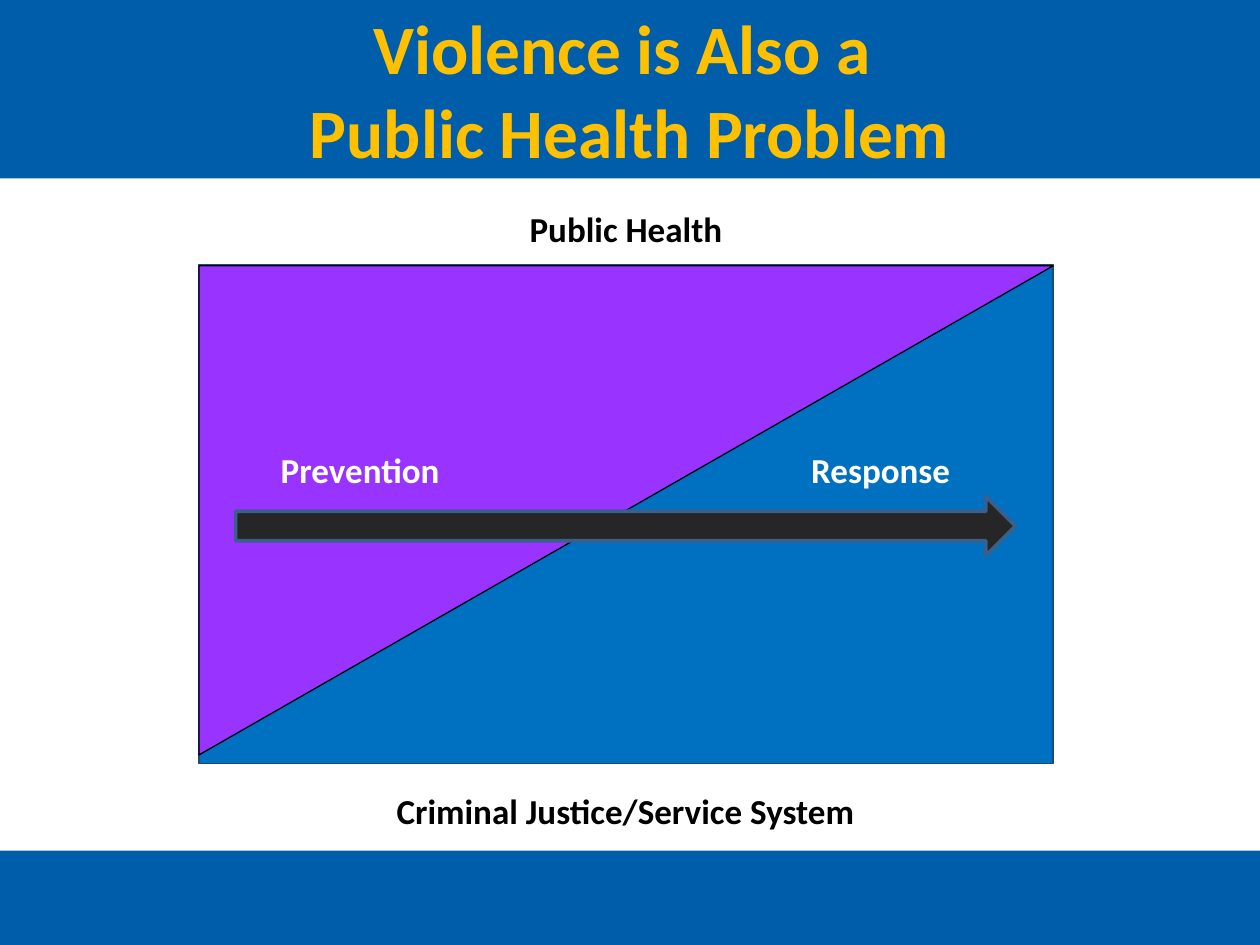
import pptx
import pptx.dml.color
import pptx.enum.shapes
import pptx.enum.text
import pptx.util

Cm = pptx.util.Cm
RGBColor = pptx.dml.color.RGBColor
SHAPE = pptx.enum.shapes.MSO_SHAPE
ALIGN = pptx.enum.text.PP_ALIGN
ANCHOR = pptx.enum.text.MSO_ANCHOR

BAND_BLUE = RGBColor(0x00, 0x5D, 0xAA)
JUSTICE_BLUE = RGBColor(0x00, 0x70, 0xC0)
NAVY = RGBColor(0x1F, 0x49, 0x7D)
PURPLE = RGBColor(0x99, 0x33, 0xFF)
CHARCOAL = RGBColor(0x26, 0x26, 0x26)
STEEL = RGBColor(0x3A, 0x5F, 0x8C)
GOLD = RGBColor(0xFF, 0xC0, 0x00)
BLACK = RGBColor(0x00, 0x00, 0x00)
WHITE = RGBColor(0xFF, 0xFF, 0xFF)

SLIDE_WIDTH, SLIDE_HEIGHT = 25.4, 19.05
FIELD_LEFT, FIELD_TOP, FIELD_WIDTH, FIELD_HEIGHT = 4.01, 5.33, 17.22, 10.06
TRIANGLE_DEPTH = 9.86


def add_filled_shape(slide, kind, left, top, width, height, fill,
                     line=None, line_width=0.75):
    shape = slide.shapes.add_shape(kind, Cm(left), Cm(top), Cm(width), Cm(height))
    shape.shadow.inherit = False
    shape.fill.solid()
    shape.fill.fore_color.rgb = fill
    if line is None:
        shape.line.fill.background()
    else:
        shape.line.color.rgb = line
        shape.line.width = pptx.util.Pt(line_width)
    return shape


def add_text(slide, text, left, top, width, height=1.11, size=20, color=BLACK,
             align=ALIGN.CENTER, anchor=ANCHOR.TOP):
    box = slide.shapes.add_textbox(Cm(left), Cm(top), Cm(width), Cm(height))
    frame = box.text_frame
    frame.word_wrap = True
    frame.vertical_anchor = anchor
    paragraph = frame.paragraphs[0]
    paragraph.text = text
    paragraph.alignment = align
    for run in paragraph.runs:
        run.font.name = "Calibri"
        run.font.size = pptx.util.Pt(size)
        run.font.bold = True
        run.font.color.rgb = color


def add_bands(slide):
    for top, height in ((17.15, 1.9), (0, 3.6)):
        add_filled_shape(slide, SHAPE.RECTANGLE, 0, top, SLIDE_WIDTH, height, BAND_BLUE)


def add_divided_field(slide):
    """Blue rectangle with a purple triangle over its upper left."""
    add_filled_shape(slide, SHAPE.RECTANGLE, FIELD_LEFT, FIELD_TOP,
                     FIELD_WIDTH, FIELD_HEIGHT, JUSTICE_BLUE, NAVY)
    # A quarter turn swaps the sides about the centre.
    shift = (FIELD_WIDTH - TRIANGLE_DEPTH) / 2
    triangle = add_filled_shape(slide, SHAPE.RIGHT_TRIANGLE,
                                FIELD_LEFT + shift, FIELD_TOP + 0.03 - shift,
                                TRIANGLE_DEPTH, FIELD_WIDTH, PURPLE, BLACK)
    triangle.rotation = 90


def main():
    presentation = pptx.Presentation()
    presentation.slide_width = Cm(SLIDE_WIDTH)
    presentation.slide_height = Cm(SLIDE_HEIGHT)
    slide = presentation.slides.add_slide(presentation.slide_layouts[6])

    add_bands(slide)
    add_divided_field(slide)
    add_text(slide, "Prevention", 5.41, 8.92, 6.32, color=WHITE, align=ALIGN.LEFT)
    add_text(slide, "Response", 15.8, 8.92, 3.91, color=WHITE)
    add_text(slide, "Public Health", 9.7, 4.06, 5.84)
    add_text(slide, "Criminal Justice/Service System", 5.46, 15.8, 14.3)
    add_filled_shape(slide, SHAPE.RIGHT_ARROW, 4.75, 10.01, 15.72, 1.19,
                     CHARCOAL, STEEL, line_width=2)
    add_text(slide, "Violence is Also a \vPublic Health Problem", 1.27, 0.2, 22.86,
             height=3.18, size=39.6, color=GOLD, anchor=ANCHOR.MIDDLE)

    presentation.save("out.pptx")


if __name__ == "__main__":
    main()
